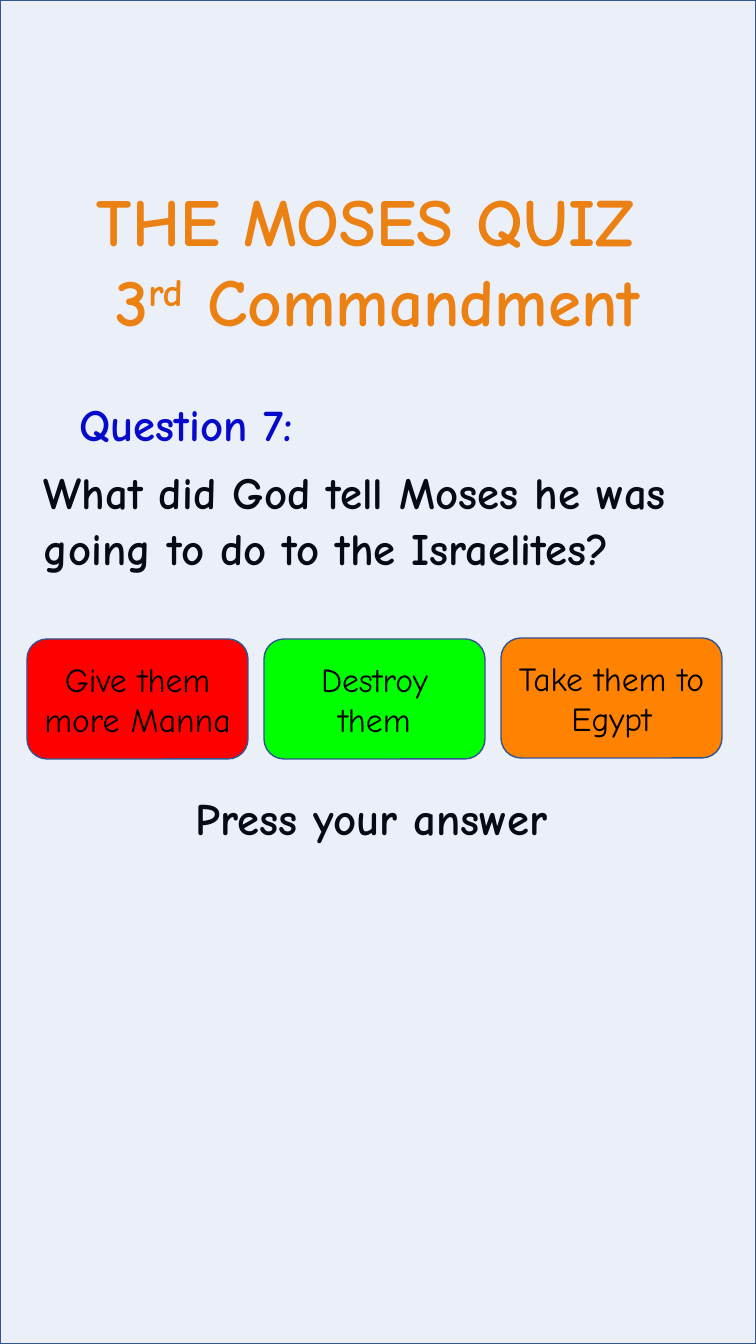
from pptx import Presentation
from pptx import util as u
from pptx.dml.color import RGBColor
from pptx.enum import shapes, text
from pptx.oxml.ns import qn
from lxml import etree

PX = 914400 / 100.8
SLIDE = (756, 1344)
FONT = "Comic Neue"
EDGE, VEIL = "325491", "4472C4"
CENTER, LEFT = text.PP_ALIGN.CENTER, text.PP_ALIGN.LEFT

TITLE = {
    "box": (30, 174, 695, 173),
    "lines": [[("THE MOSES QUIZ ", 0)],
              [("3", 0), ("rd", 30), (" Commandment", 0)]],
    "font": {"size": u.Pt(48), "bold": True}, "color": "FF8200", "wrap": False,
    "para": {"alignment": CENTER, "line_spacing": 1.0, "space_before": u.Pt(0)},
}
BODY_FONT = {"size": u.Pt(32), "bold": True}
TEXTS = [
    {"box": (47, 392, 279, 64), "lines": [[("Question 7:", 0)]],
     "font": BODY_FONT, "color": "0000CC", "wrap": False,
     "para": {"alignment": CENTER}},
    {"box": (34, 458, 675, 178),
     "lines": [[("What did God tell Moses he was going to do to the Israelites?", 0)]],
     "font": BODY_FONT, "color": "000000", "wrap": True,
     "para": {"alignment": LEFT, "line_spacing": u.Pt(40), "space_before": u.Pt(7.5)}},
    {"box": (186, 792, 425, 73), "lines": [[("Press your answer", 0)]],
     "font": BODY_FONT, "color": "000000", "wrap": True,
     "para": {"alignment": LEFT, "line_spacing": 0.9, "space_before": u.Pt(7.5)}},
]
ANSWERS = [
    ("Give them more Manna", "FF0000", 639),
    ("Destroy them", "00FF00", 639),
    ("Take them to Egypt", "FF8200", 638),
]
ANSWER_LEFT, ANSWER_STEP, ANSWER_W, ANSWER_H = 27, 237, 221, 120


def rgb(value):
    return RGBColor.from_string(value)


def emu(box):
    return [round(v * PX) for v in box]


def assign(obj, values):
    for name, value in values.items():
        setattr(obj, name, value)


def write(sp, lines, font, color, para, wrap, anchor=text.MSO_ANCHOR.TOP):
    tf = sp.text_frame
    assign(tf, {"word_wrap": wrap, "vertical_anchor": anchor,
                "auto_size": text.MSO_AUTO_SIZE.NONE})
    for i, runs in enumerate(lines):
        p = tf.add_paragraph() if i else tf.paragraphs[0]
        assign(p, para)
        for words, raised in runs:
            r = p.add_run()
            r.text = words
            assign(r.font, {"name": FONT, **font})
            r.font.color.rgb = rgb(color)
            if raised:
                r.font._element.set("baseline", str(raised * 1000))


def add_block(slide, kind, box, fill):
    sp = slide.shapes.add_shape(kind, *emu(box))
    sp.shadow.inherit = False
    sp.fill.solid()
    sp.fill.fore_color.rgb = rgb(fill)
    sp.line.color.rgb = rgb(EDGE)
    sp.line.width = u.Pt(1)
    return sp


def write_item(sp, item):
    write(sp, **{k: v for k, v in item.items() if k != "box"})


def main():
    prs = Presentation()
    prs.slide_width, prs.slide_height = emu(SLIDE)
    slide = prs.slides.add_slide(prs.slide_layouts[5])

    title = slide.shapes.title
    assign(title, dict(zip(("left", "top", "width", "height"), emu(TITLE["box"]))))
    write_item(title, TITLE)
    for item in TEXTS:
        write_item(slide.shapes.add_textbox(*emu(item["box"])), item)

    veil = add_block(slide, shapes.MSO_SHAPE.RECTANGLE, (0, 0, *SLIDE), VEIL)
    tint = veil._element.spPr.find(qn("a:solidFill")).find(qn("a:srgbClr"))
    etree.SubElement(tint, qn("a:alpha")).set("val", "10000")

    for i, (answer, fill, top) in enumerate(ANSWERS):
        box = (ANSWER_LEFT + i * ANSWER_STEP, top, ANSWER_W, ANSWER_H)
        sp = add_block(slide, shapes.MSO_SHAPE.ROUNDED_RECTANGLE, box, fill)
        write(sp, [[(answer, 0)]], {"size": u.Pt(24)}, "000000",
              {"alignment": CENTER}, True, text.MSO_ANCHOR.MIDDLE)

    prs.save("out.pptx")


if __name__ == "__main__":
    main()
